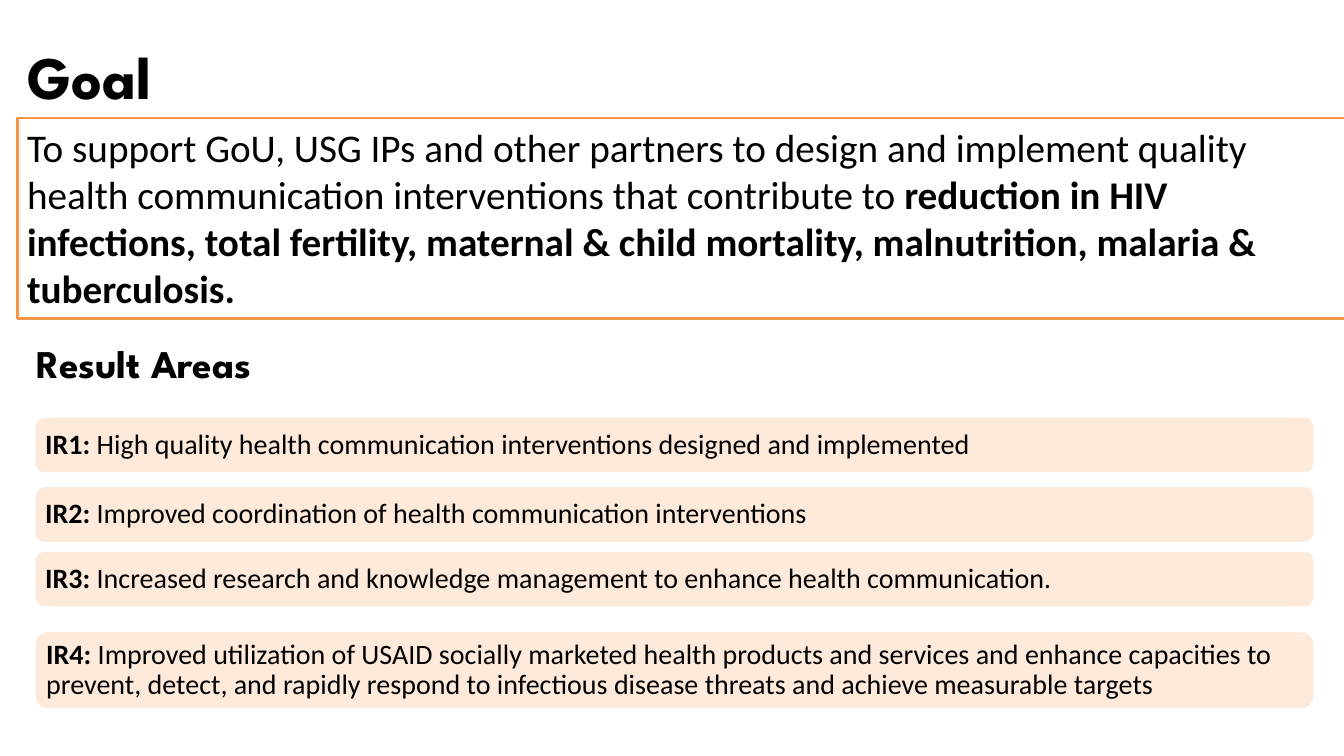
from pptx import Presentation
from pptx.util import Inches, Pt
from pptx.dml.color import RGBColor as Rgb
from pptx.enum.shapes import MSO_SHAPE as Kind
from pptx.enum.text import MSO_ANCHOR as Anchor, PP_ALIGN as Align

HEAD, BODY = "League Spartan", "Calibri"
COLORS = {"ink": "000000", "paper": "FFFFFF", "edge": "F79646", "peach": "FDEADA"}

TITLE = "Goal"
GOAL = [
    ("To support GoU, USG IPs and other partners to design and implement quality "
     "health communication interventions that contribute to ", False),
    ("reduction in HIV infections, total fertility, maternal & child mortality, "
     "malnutrition, malaria & tuberculosis.", True),
]
AREAS = "Result Areas"
RESULTS = [
    (4.13, 0.57, "High quality health communication interventions designed and implemented"),
    (4.82, 0.57, "Improved coordination of health communication interventions"),
    (5.46, 0.57, "Increased research and knowledge management to enhance health communication."),
    (6.26, 0.78, "Improved utilization of USAID socially marketed health products and services "
                 "and enhance capacities to prevent, detect, and rapidly respond to infectious "
                 "disease threats and achieve measurable targets"),
]


def color(name):
    return Rgb.from_string(COLORS[name])


def write(frame, parts, size, face, anchor=Anchor.TOP):
    frame.word_wrap = True
    frame.vertical_anchor = anchor
    para = frame.paragraphs[0]
    para.alignment = Align.LEFT
    for text, bold in parts:
        run = para.add_run()
        run.text = text
        font = run.font
        font.name, font.size, font.bold = face, Pt(size), bold
        font.color.rgb = color("ink")
    return para


def panel(slide, kind, box, fill, line):
    shape = slide.shapes.add_shape(kind, *map(Inches, box))
    shape.shadow.inherit = False
    shape.fill.solid()
    shape.fill.fore_color.rgb = color(fill)
    shape.line.color.rgb = color(line)
    shape.line.width = Pt(2)
    return shape


deck = Presentation()
deck.slide_width, deck.slide_height = Inches(13.33), Inches(7.5)
slide = deck.slides.add_slide(deck.slide_layouts[5])

title = slide.shapes.title
title.left, title.top, title.width, title.height = map(Inches, (0.17, 0.34, 12.24, 0.82))
write(title.text_frame, [(TITLE, True)], 43, HEAD)

goal = panel(slide, Kind.RECTANGLE, (0.17, 1.17, 13.17, 1.99), "paper", "edge")
write(goal.text_frame, GOAL, 28, BODY)

areas = slide.shapes.add_textbox(*map(Inches, (0.26, 3.32, 3.08, 0.57)))
write(areas.text_frame, [(AREAS, True)], 28, HEAD)

for num, (top, height, text) in enumerate(RESULTS, 1):
    bar = panel(slide, Kind.ROUNDED_RECTANGLE, (0.34, top, 12.7, height), "peach", "paper")
    frame = bar.text_frame
    frame.margin_left = frame.margin_right = Inches(0.08)
    frame.margin_top = frame.margin_bottom = Inches(0.04)
    para = write(frame, [(f"IR{num}: ", True), (text, False)], 20, BODY, Anchor.MIDDLE)
    para.line_spacing = 0.9

deck.save("out.pptx")
